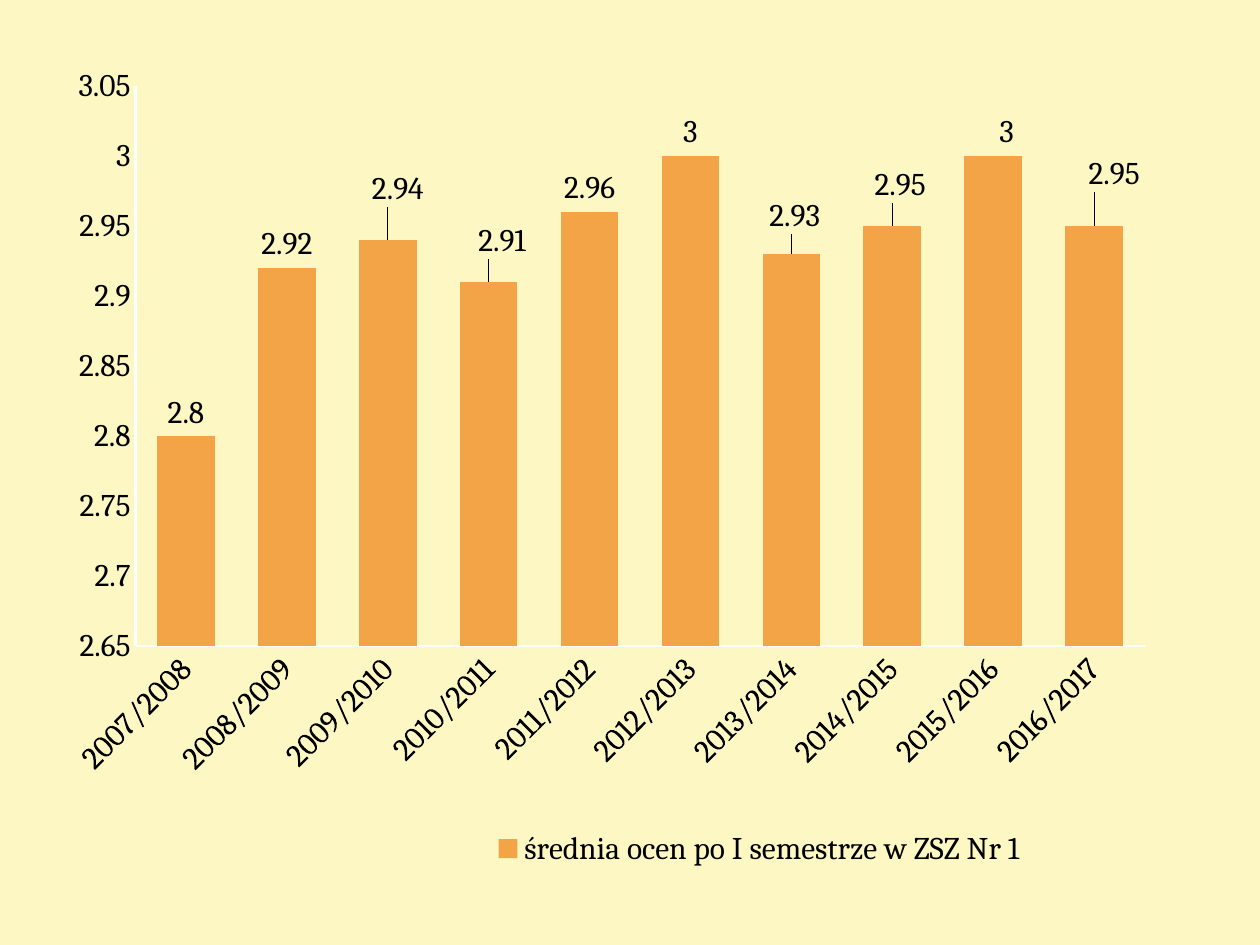
from lxml import etree
from pptx import Presentation
from pptx.chart.data import CategoryChartData
from pptx.dml.color import RGBColor
from pptx.enum.chart import (XL_CHART_TYPE, XL_LABEL_POSITION,
                             XL_LEGEND_POSITION, XL_TICK_MARK)
from pptx.oxml.ns import qn
from pptx.util import Pt

COLUMNS = XL_CHART_TYPE.COLUMN_CLUSTERED
ABOVE = XL_LABEL_POSITION.OUTSIDE_END
RIGHT = XL_LEGEND_POSITION.RIGHT
NO_TICK = XL_TICK_MARK.NONE

CREAM = RGBColor(0xFD, 0xF8, 0xC3)
ORANGE = RGBColor(0xF3, 0xA4, 0x47)
BLACK = RGBColor(0, 0, 0)
WHITE = RGBColor(0xFF, 0xFF, 0xFF)

# Content
SERIES_NAME = "średnia ocen po I semestrze w ZSZ Nr 1"
FIRST_YEAR = 2007
AVERAGES = [2.8, 2.92, 2.94, 2.91, 2.96, 3, 2.93, 2.95, 3, 2.95]
SCHOOL_YEARS = [f"{year}/{year + 1}"
                for year in range(FIRST_YEAR, FIRST_YEAR + len(AVERAGES))]

# Places in px
PX = 914400 // 126
PAGE = (1260, 945)
CHART = (74, 66, 1121, 824)
PLOT = {"x": 0.052, "y": 0.024, "w": 0.903, "h": 0.68}
LEGEND = {"x": 0.36, "y": 0.92, "w": 0.5, "h": 0.06}
# Label shifts from the usual place above the bar: index -> (right, down)
LABEL_SHIFTS = {2: (10, -27), 3: (14, -17), 6: (3, -14),
                7: (8, -17), 8: (14, 0), 9: (20, -29)}
TEXT = {"name": "Cambria", "size": Pt(18)}
VALUE_SCALE = {"minimum_scale": 2.65, "maximum_scale": 3.05, "major_unit": 0.05,
               "has_major_gridlines": False}


def set_all(target, values):
    for name, value in values.items():
        setattr(target, name, value)


def set_font(font):
    set_all(font, TEXT)
    font.color.rgb = BLACK


def make_layout(values, inner=False, edge=True):
    """Return a c:layout element; edge places it from the chart corner."""
    layout = etree.Element(qn("c:layout"))
    manual = etree.SubElement(layout, qn("c:manualLayout"))
    settings = {"layoutTarget": "inner"} if inner else {}
    if edge:
        settings.update(xMode="edge", yMode="edge")
    for tag, value in {**settings, **values}.items():
        etree.SubElement(manual, qn(f"c:{tag}")).set("val", str(value))
    return layout


deck = Presentation()
deck.slide_width, deck.slide_height = (side * PX for side in PAGE)
page = deck.slides.add_slide(deck.slide_layouts[6])
page.background.fill.solid()
page.background.fill.fore_color.rgb = CREAM

# Chart
data = CategoryChartData()
data.categories = SCHOOL_YEARS
data.add_series(SERIES_NAME, AVERAGES)
chart = page.shapes.add_chart(COLUMNS, *(side * PX for side in CHART), data).chart
chart.has_title = False
set_font(chart.font)

# Plot area
plot_area = chart.plots[0]._element.getparent()
for old_layout in plot_area.findall(qn("c:layout")):
    plot_area.remove(old_layout)
plot_area.insert(0, make_layout(PLOT, inner=True))

# Axes
set_all(chart.value_axis, VALUE_SCALE)
for axis in (chart.category_axis, chart.value_axis):
    axis.major_tick_mark = axis.minor_tick_mark = NO_TICK
    axis.format.line.color.rgb = WHITE
    axis.format.line.width = Pt(1.5)
    set_font(axis.tick_labels.font)
slant = chart.category_axis._element.find(qn("c:txPr")).find(qn("a:bodyPr"))
slant.set("rot", str(-45 * 60000))
slant.set("vert", "horz")

# Bars and their labels
plot = chart.plots[0]
plot.gap_width = 75
plot.vary_by_categories = False
bars = plot.series[0]
bars.format.fill.solid()
bars.format.fill.fore_color.rgb = ORANGE
labels = bars.data_labels
labels.show_value = True
labels.position = ABOVE
set_font(labels.font)
for index in LABEL_SHIFTS:
    bars.points[index].data_label.position = ABOVE
for label in bars._element.iter(qn("c:dLbl")):
    mark = label.find(qn("c:idx"))
    right, down = LABEL_SHIFTS[int(mark.get("val"))]
    shift = {"x": round(right / CHART[2], 3), "y": round(down / CHART[3], 3)}
    mark.addnext(make_layout(shift, edge=False))

# Legend
chart.has_legend = True
legend = chart.legend
legend.position = RIGHT
legend.include_in_layout = False
set_font(legend.font)
for old_layout in legend._element.findall(qn("c:layout")):
    legend._element.remove(old_layout)
legend._element.find(qn("c:legendPos")).addnext(make_layout(LEGEND))

deck.save("out.pptx")
